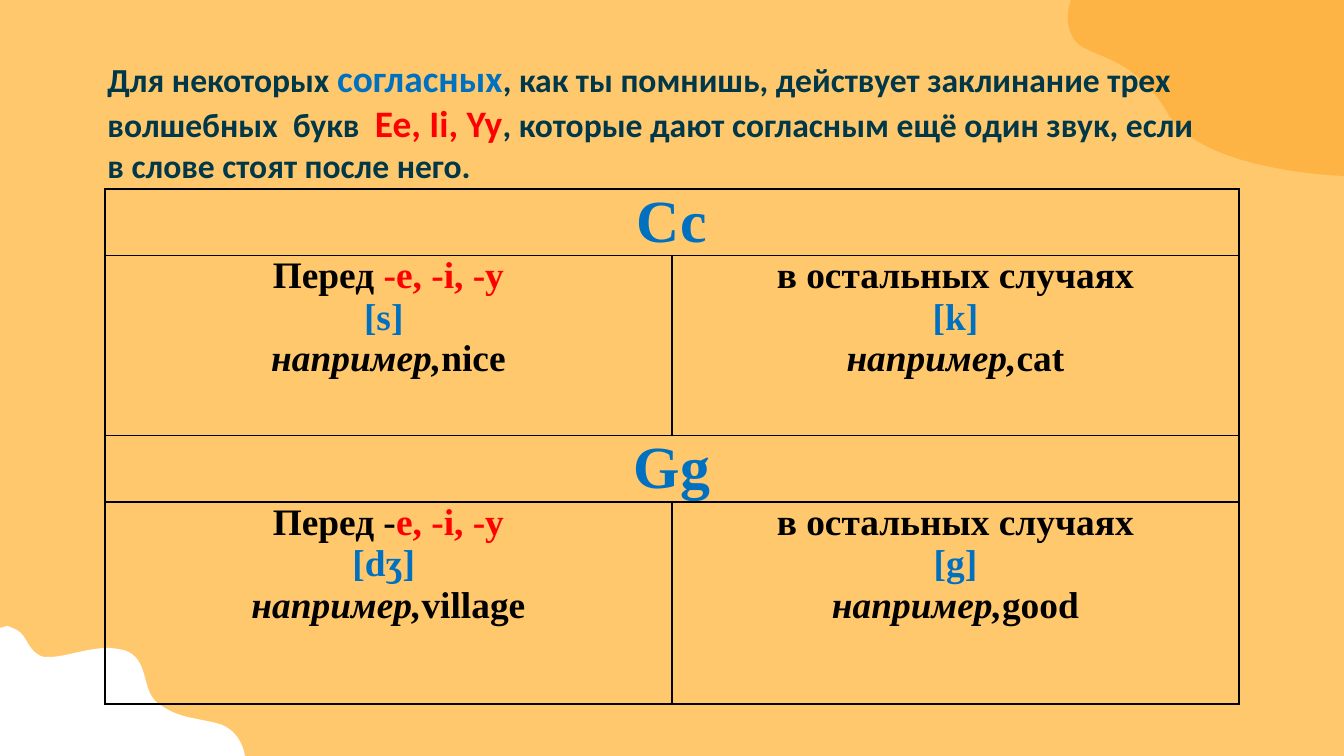
from lxml import etree
from pptx import Presentation
from pptx import util as u
from pptx.dml.color import RGBColor
from pptx.enum import text
from pptx.oxml.ns import qn

PX = 914400 / 134.4  # EMU in one px
APRICOT = RGBColor(0xFF, 0xC8, 0x6D)
ORANGE = RGBColor(0xFE, 0xB4, 0x44)
WHITE = RGBColor(0xFF, 0xFF, 0xFF)
BLACK = RGBColor(0, 0, 0)
TEAL = RGBColor(0x00, 0x38, 0x49)
BLUE = RGBColor(0x00, 0x70, 0xC0)
RED = RGBColor(0xFF, 0, 0)


def add_run(paragraph, words, size=20, color=BLACK, font="Times New Roman", italic=False):
    run = paragraph.add_run()
    run.text = words
    run.font.name = font
    run.font.size = u.Pt(size)
    run.font.color.rgb = color
    run.font.bold = True
    run.font.italic = italic


prs = Presentation()
prs.slide_width, prs.slide_height = u.Emu(round(1344 * PX)), u.Emu(round(756 * PX))
slide = prs.slides.add_slide(prs.slide_layouts[5])
slide.background.fill.solid()
slide.background.fill.fore_color.rgb = APRICOT

# Corner waves: start, cubic curves (two handles and an end each), straight corners
WAVES = [
    (WHITE, (7, 626), [
        (9, 626), (12, 628), (17, 630), (28, 636), (28, 653), (44, 657),
        (47, 657), (48, 657), (50, 657), (65, 657), (87, 648), (108, 648),
        (113, 648), (118, 649), (124, 650), (151, 659), (140, 691), (159, 704),
        (179, 718), (191, 717), (216, 723), (242, 729), (245, 756), (245, 756),
    ], [(0, 756), (0, 628)]),
    (ORANGE, (1344, 176), [
        (1344, 176), (1200, 172), (1167, 112), (1132, 52), (1085, 58), (1074, 39),
        (1062, 22), (1071, 0), (1071, 0),
    ], [(1344, 0)]),
]
for color, start, curves, corners in WAVES:
    builder = slide.shapes.build_freeform(*start, scale=PX)
    builder.add_line_segments(curves + corners, close=True)
    wave = builder.convert_to_shape()
    wave.shadow.inherit = False
    wave.fill.solid()
    wave.fill.fore_color.rgb = color
    wave.line.fill.background()
    # Join each three points into one cubic curve
    segments = list(wave._element.iter(qn("a:lnTo")))[:len(curves)]
    for first in range(0, len(curves), 3):
        curve = segments[first]
        curve.addprevious(etree.Element(qn("a:cubicBezTo")))
        joined = curve.getprevious()
        for segment in segments[first:first + 3]:
            joined.append(segment[0])
            segment.getparent().remove(segment)

# Title, in front of the waves
title = slide.shapes.title
slide.shapes._spTree.append(title._element)
title.left, title.top, title.width, title.height = (
    u.Emu(round(v * PX)) for v in (94, 42, 1134, 137))
frame = title.text_frame
frame.word_wrap = True
frame.auto_size = text.MSO_AUTO_SIZE.NONE
frame.vertical_anchor = text.MSO_ANCHOR.TOP
frame.margin_left = frame.margin_right = frame.margin_top = frame.margin_bottom = u.Inches(0.1)
intro = frame.paragraphs[0]
intro.alignment = text.PP_ALIGN.LEFT
for words, size, color in (
        ("Для некоторых ", 18, TEAL),
        ("согласных", 20, BLUE),
        (", как ты помнишь, действует заклинание трех волшебных  букв  ", 18, TEAL),
        ("Ee, Ii, Yy", 20, RED),
        (", которые дают согласным ещё один звук, если в слове стоят после него.", 18, TEAL)):
    add_run(intro, words, size=size, color=color, font="Calibri")

# Reading rules: letter, then (condition, vowels, sound, example) for each column
RULES = [
    ("Сс", [("Перед ", "-e, -i, -y", "[s] ", "nice"),
            ("в остальных случаяx", "", "[k]", "cat")]),
    ("Gg", [("Перед -", "e, -i, -y", "[dʒ] ", "village"),
            ("в остальных случаяx", "", "[g]", "good")]),
]
row_heights = [63, 180, 63, 202]
table = slide.shapes.add_table(4, 2, *(
    u.Emu(round(v * PX)) for v in (105, 189, 1134, sum(row_heights)))).table
table.first_row = table.horz_banding = False
for row, height in zip(table.rows, row_heights):
    row.height = u.Emu(round(height * PX))

# Cell margins, borders and fill
for cell in table.iter_cells():
    cell.margin_left = cell.margin_right = u.Inches(0.07)
    cell.margin_top = cell.margin_bottom = 0
    borders = cell._tc.get_or_add_tcPr()
    for side in ("a:lnL", "a:lnR", "a:lnT", "a:lnB"):
        border = etree.SubElement(borders, qn(side), w=str(u.Pt(1)))
        ink = etree.SubElement(border, qn("a:solidFill"))
        etree.SubElement(ink, qn("a:srgbClr"), val=str(BLACK))
    cell.fill.background()

# Cell text
for index, (letter, cases) in enumerate(RULES):
    heading = table.cell(2 * index, 0)
    heading.merge(table.cell(2 * index, 1))
    line = heading.text_frame.paragraphs[0]
    line.alignment = text.PP_ALIGN.CENTER
    add_run(line, letter, size=32, color=BLUE)
    for column, (condition, vowels, sound, example) in enumerate(cases):
        rule = table.cell(2 * index + 1, column).text_frame
        lines = [rule.paragraphs[0], rule.add_paragraph(), rule.add_paragraph()]
        for line in lines:
            line.alignment = text.PP_ALIGN.CENTER
        add_run(lines[0], condition)
        if vowels:
            add_run(lines[0], vowels, color=RED)
        add_run(lines[1], sound, color=BLUE)
        add_run(lines[2], "например,", italic=True)
        add_run(lines[2], example)

prs.save("out.pptx")
